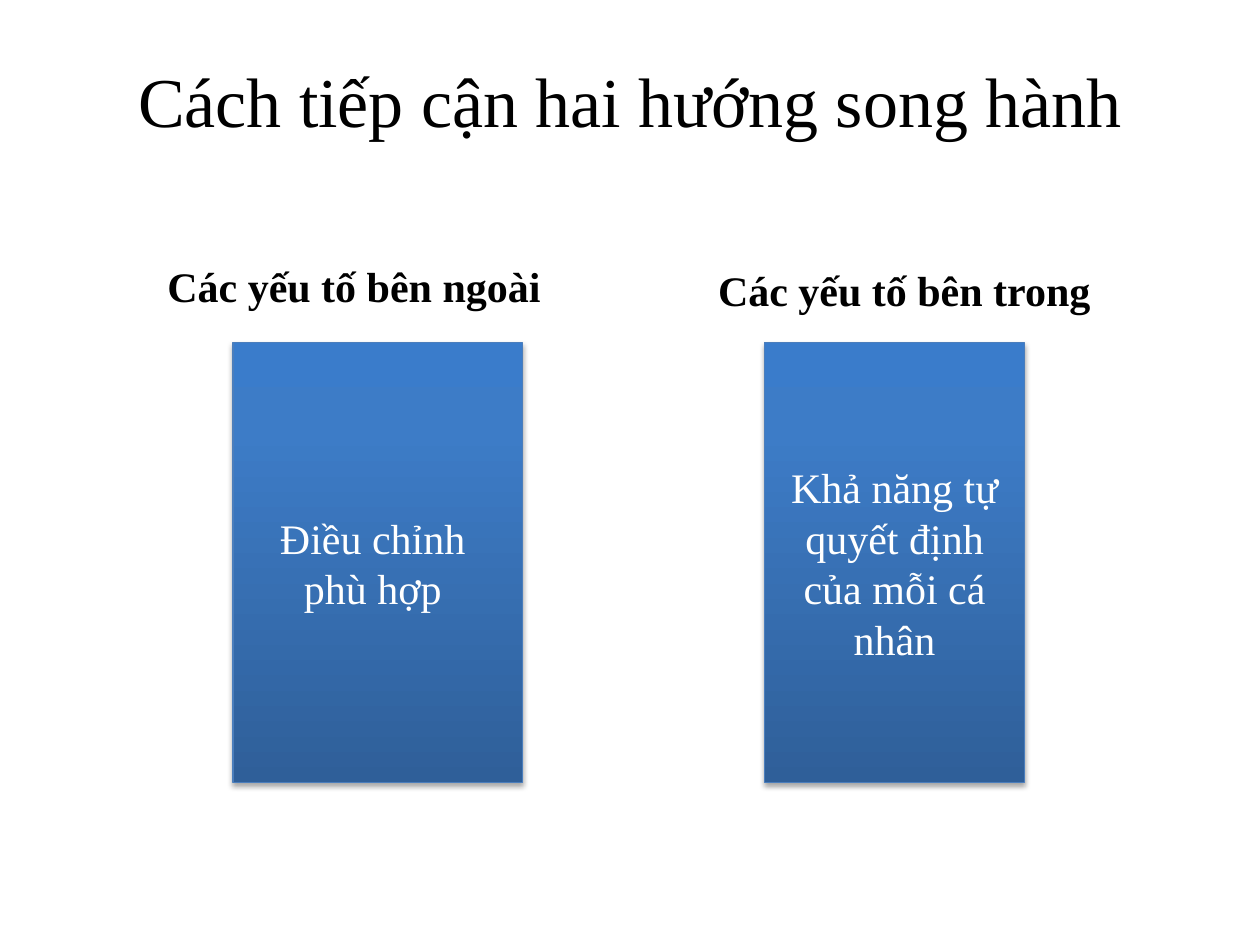
from lxml import etree
from pptx import Presentation
from pptx.dml.color import RGBColor
from pptx.enum.shapes import MSO_SHAPE
from pptx.enum.text import MSO_ANCHOR, PP_ALIGN
from pptx.oxml.ns import qn
from pptx.util import Inches, Pt

RECT = MSO_SHAPE.RECTANGLE
TOP, MID = MSO_ANCHOR.TOP, MSO_ANCHOR.MIDDLE
LEFT, MIDDLE = PP_ALIGN.LEFT, PP_ALIGN.CENTER
COLS, ROWS = 100, 75


def paint(code):
    return RGBColor.from_string(code)


def node(parent, tag, **attrs):
    return etree.SubElement(parent, qn(tag), {k: str(v) for k, v in attrs.items()})


class Deck:
    font = "Times New Roman"
    edge = "4B7EBC"
    stops = ((0, "2F5F99"), (80, "3D7CC7"), (100, "3A7CCB"))

    def __init__(self):
        self.file = Presentation()
        self.file.slide_width, self.file.slide_height = Inches(10), Inches(7.5)
        self.slide = self.file.slides.add_slide(self.file.slide_layouts[6])

    def place(self, col, row, wide, high):
        x, y = self.file.slide_width / COLS, self.file.slide_height / ROWS
        return [round(v) for v in (col * x, row * y, wide * x, high * y)]

    def letter(self, shape, lines, size, color, align, anchor, bold=False, wrap=True):
        frame = shape.text_frame
        frame.text = "\n".join(lines)
        for name, value in {"word_wrap": wrap, "vertical_anchor": anchor}.items():
            setattr(frame, name, value)
        look = {"name": self.font, "size": Pt(size), "bold": bold}
        for para in frame.paragraphs:
            para.alignment = align
            for run in para.runs:
                for name, value in look.items():
                    setattr(run.font, name, value)
                run.font.color.rgb = paint(color)

    def label(self, grid, text, size, **style):
        look = {"color": "000000", "align": LEFT, "anchor": TOP} | style
        box = self.slide.shapes.add_textbox(*self.place(*grid))
        self.letter(box, [text], size, **look)

    def panel(self, grid, lines):
        shape = self.slide.shapes.add_shape(RECT, *self.place(*grid))
        props = shape._element.spPr
        grad = node(props, "a:gradFill", rotWithShape=1)
        stops = node(grad, "a:gsLst")
        for share, color in self.stops:
            node(node(stops, "a:gs", pos=share * 1000), "a:srgbClr", val=color)
        node(grad, "a:lin", ang=270 * 60000, scaled=0)
        shape.line.color.rgb = paint(self.edge)
        shape.line.width = Pt(0.75)
        shade = node(node(props, "a:effectLst"), "a:outerShdw", blurRad=Pt(3.1),
                     dist=Pt(1.8), dir=90 * 60000, rotWithShape=0)
        node(node(shade, "a:srgbClr", val="000000"), "a:alpha", val=35000)
        self.letter(shape, lines, 24, "FFFFFF", MIDDLE, MID)


def main():
    deck = Deck()
    deck.label((5, 2.3, 90, 11.2), "Cách tiếp cận hai hướng song hành", 40,
               align=MIDDLE, anchor=MID)
    top, high = 27.2, 34.9
    deck.panel((18.5, top, 23, high), ["Điều chỉnh ", "phù hợp "])
    deck.panel((60.7, top, 20.6, high), ["Khả năng tự quyết định của mỗi cá nhân"])
    deck.label((12.3, 20.2, 33.6, 5), "Các yếu tố bên ngoài", 24, bold=True)
    deck.label((56, 20.5, 31.9, 5), "Các yếu tố bên trong", 24, bold=True, wrap=False)
    deck.file.save("out.pptx")


if __name__ == "__main__":
    main()
